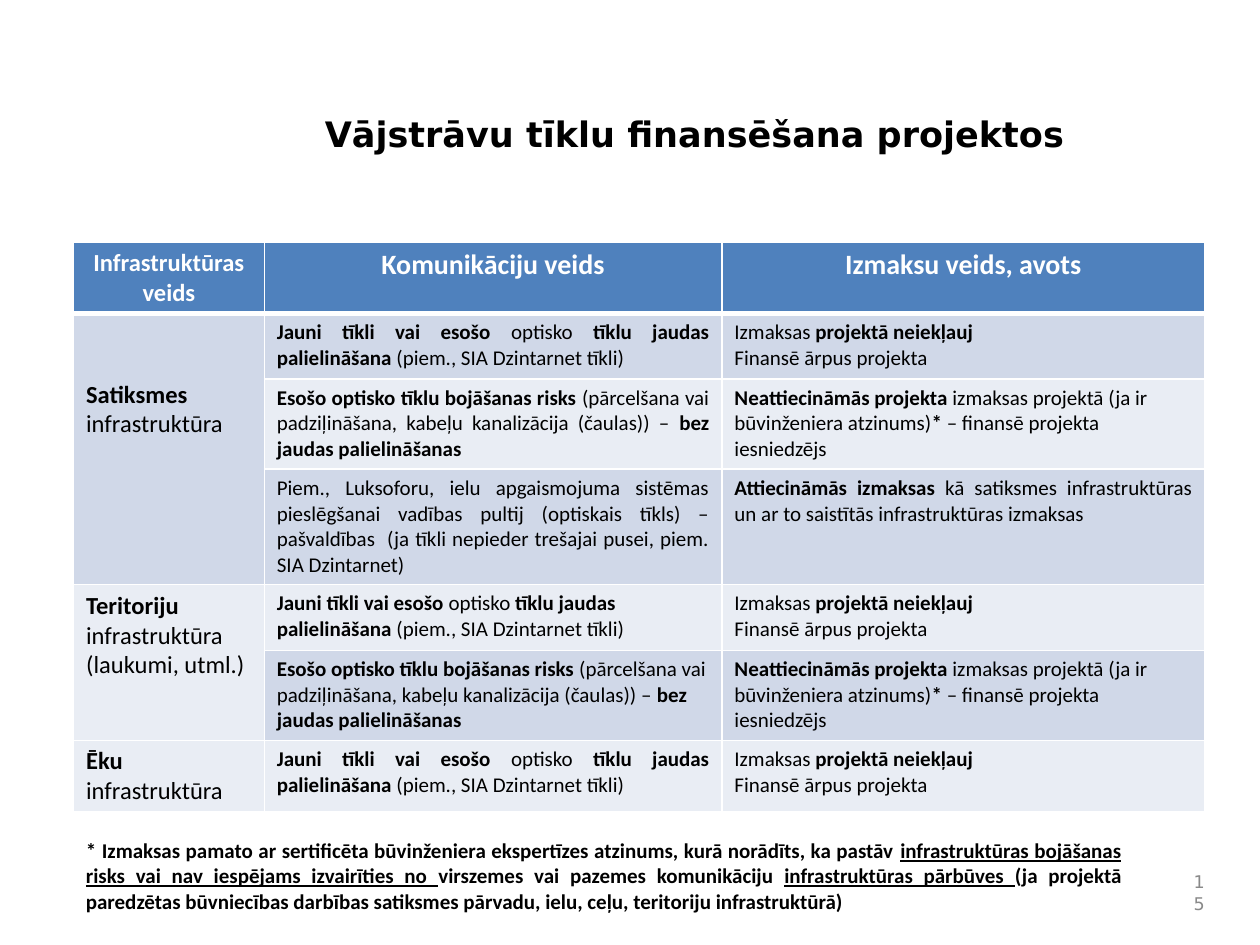
from lxml import etree
from pptx import Presentation
from pptx.dml.color import RGBColor
from pptx.enum.text import MSO_ANCHOR, PP_ALIGN
from pptx.oxml.ns import qn
from pptx.util import Pt

LEFT, CENTER, RIGHT, JUSTIFY = PP_ALIGN.LEFT, PP_ALIGN.CENTER, PP_ALIGN.RIGHT, PP_ALIGN.JUSTIFY
TOP, MIDDLE = MSO_ANCHOR.TOP, MSO_ANCHOR.MIDDLE

BLACK = RGBColor(0x00, 0x00, 0x00)
WHITE = RGBColor(0xFF, 0xFF, 0xFF)
GREY = RGBColor(0x89, 0x89, 0x89)
HEADER_BLUE = RGBColor(0x4F, 0x81, 0xBD)
BAND_DARK = RGBColor(0xD0, 0xD8, 0xE8)
BAND_LIGHT = RGBColor(0xE9, 0xED, 0xF4)

BODY_FONT = "Calibri"
TITLE_FONT = "DejaVu Sans"


def write(frame, paragraphs, size, align=LEFT, font=BODY_FONT, color=BLACK):
    """Fill a frame; each paragraph is a list of (text, style), style holding b and/or u."""
    frame.word_wrap = True
    for index, runs in enumerate(paragraphs):
        paragraph = frame.add_paragraph() if index else frame.paragraphs[0]
        paragraph.alignment = align
        for text, style in runs:
            run = paragraph.add_run()
            run.text = text
            run.font.size = Pt(size)
            run.font.name = font
            run.font.color.rgb = color
            run.font.bold = "b" in style
            run.font.underline = "u" in style


def style_cell(cell, fill, bottom_width):
    """Set the fill and white borders of a table cell."""
    properties = cell._tc.get_or_add_tcPr()
    for side, width in (("lnL", 1), ("lnR", 1), ("lnT", 1), ("lnB", bottom_width)):
        line = etree.SubElement(properties, qn(f"a:{side}"), w=str(Pt(width)))
        solid = etree.SubElement(line, qn("a:solidFill"))
        etree.SubElement(solid, qn("a:srgbClr"), val=str(WHITE))
    cell.fill.solid()
    cell.fill.fore_color.rgb = fill


presentation = Presentation()
presentation.slide_width = Pt(720)
presentation.slide_height = Pt(540)
slide = presentation.slides.add_slide(presentation.slide_layouts[6])

# Title, page number and footnote
title = [("Vājstrāvu tīklu finansēšana projektos ", "b")]
page_number = [("15", "")]
footnote = [
    ("* Izmaksas pamato ar sertificēta būvinženiera ekspertīzes atzinums, "
     "kurā norādīts, ka pastāv ", "b"),
    ("infrastruktūras bojāšanas risks vai nav iespējams izvairīties no ", "bu"),
    ("virszemes vai pazemes komunikāciju ", "b"),
    ("infrastruktūras pārbūves ", "bu"),
    ("(ja projektā paredzētas būvniecības darbības satiksmes pārvadu, ielu, ceļu, "
     "teritoriju infrastruktūrā)", "b"),
]
text_boxes = [
    ((160.5, 61, 480, 66), title, 20, CENTER, TITLE_FONT, BLACK, TOP),
    ((671.5, 498, 24, 24), page_number, 10, RIGHT, TITLE_FONT, GREY, MIDDLE),
    ((42, 475.2, 606, 47), footnote, 12, JUSTIFY, BODY_FONT, BLACK, TOP),
]
for bounds, runs, size, align, font, color, anchor in text_boxes:
    frame = slide.shapes.add_textbox(*map(Pt, bounds)).text_frame
    frame.vertical_anchor = anchor
    write(frame, [runs], size, align, font, color)

# Table content
headers = [("Infrastruktūras veids", 14), ("Komunikāciju veids", 16), ("Izmaksu veids, avots", 16)]
new_networks = [[
    ("Jauni tīkli vai esošo ", "b"),
    ("optisko ", ""),
    ("tīklu jaudas palielināšana", "b"),
    (" (piem., SIA Dzintarnet tīkli)", ""),
]]
damage_risk = [[
    ("Esošo optisko tīklu bojāšanas risks ", "b"),
    ("(pārcelšana vai padziļināšana, kabeļu kanalizācija (čaulas)) – ", ""),
    ("bez jaudas palielināšanas", "b"),
]]
traffic_systems = [[
    ("Piem., Luksoforu, ielu apgaismojuma sistēmas pieslēgšanai vadības pultij "
     "(optiskais tīkls) – pašvaldības  (ja tīkli nepieder trešajai pusei, "
     "piem. SIA Dzintarnet)", ""),
]]
not_included = [
    [("Izmaksas ", ""), ("projektā neiekļauj", "b")],
    [("Finansē ārpus projekta", "")],
]
not_eligible = [[
    ("Neattiecināmās projekta ", "b"),
    ("izmaksas projektā (ja ir būvinženiera atzinums)", ""),
    ("* ", "b"),
    ("– finansē projekta iesniedzējs", ""),
]]
eligible = [[
    ("Attiecināmās izmaksas ", "b"),
    ("kā satiksmes infrastruktūras un ar to saistītās infrastruktūras izmaksas", ""),
]]
body_rows = [
    (new_networks, JUSTIFY, not_included, LEFT),
    (damage_risk, JUSTIFY, not_eligible, LEFT),
    (traffic_systems, JUSTIFY, eligible, JUSTIFY),
    (new_networks, LEFT, not_included, LEFT),
    (damage_risk, LEFT, not_eligible, LEFT),
    (new_networks, JUSTIFY, not_included, LEFT),
]
# First row, last row, fill, top margin, text
infrastructure_groups = [
    (1, 3, BAND_DARK, 37.8, [("Satiksmes ", "b"), ("infrastruktūra", "")]),
    (4, 5, BAND_LIGHT, 3.6, [("Teritoriju", "b"), (" infrastruktūra (laukumi, utml.)", "")]),
    (6, 6, BAND_LIGHT, 3.6, [("Ēku ", "b"), ("infrastruktūra", "")]),
]

# Table
column_widths = [109, 261.5, 276]
row_heights = [41, 37.5, 51.5, 66, 37.5, 51.5, 41]
table = slide.shapes.add_table(
    len(row_heights), len(column_widths),
    Pt(42), Pt(138.2), Pt(sum(column_widths)), Pt(sum(row_heights)),
).table
for column, width in zip(table.columns, column_widths):
    column.width = Pt(width)
for row, height in zip(table.rows, row_heights):
    row.height = Pt(height)

for column_index, (text, size) in enumerate(headers):
    cell = table.cell(0, column_index)
    style_cell(cell, HEADER_BLUE, 3)
    write(cell.text_frame, [[(text, "b")]], size, CENTER, color=WHITE)

for row_index, (network, network_align, cost, cost_align) in enumerate(body_rows, 1):
    band = BAND_DARK if row_index % 2 else BAND_LIGHT
    for column_index, content, align in ((1, network, network_align), (2, cost, cost_align)):
        cell = table.cell(row_index, column_index)
        style_cell(cell, band, 1)
        write(cell.text_frame, content, 12, align)

for first, last, fill, margin_top, runs in infrastructure_groups:
    for row_index in range(first, last + 1):
        style_cell(table.cell(row_index, 0), fill, 1)
    cell = table.cell(first, 0)
    if last > first:
        cell.merge(table.cell(last, 0))
    cell.margin_top = Pt(margin_top)
    write(cell.text_frame, [runs], 14)

presentation.save("out.pptx")
